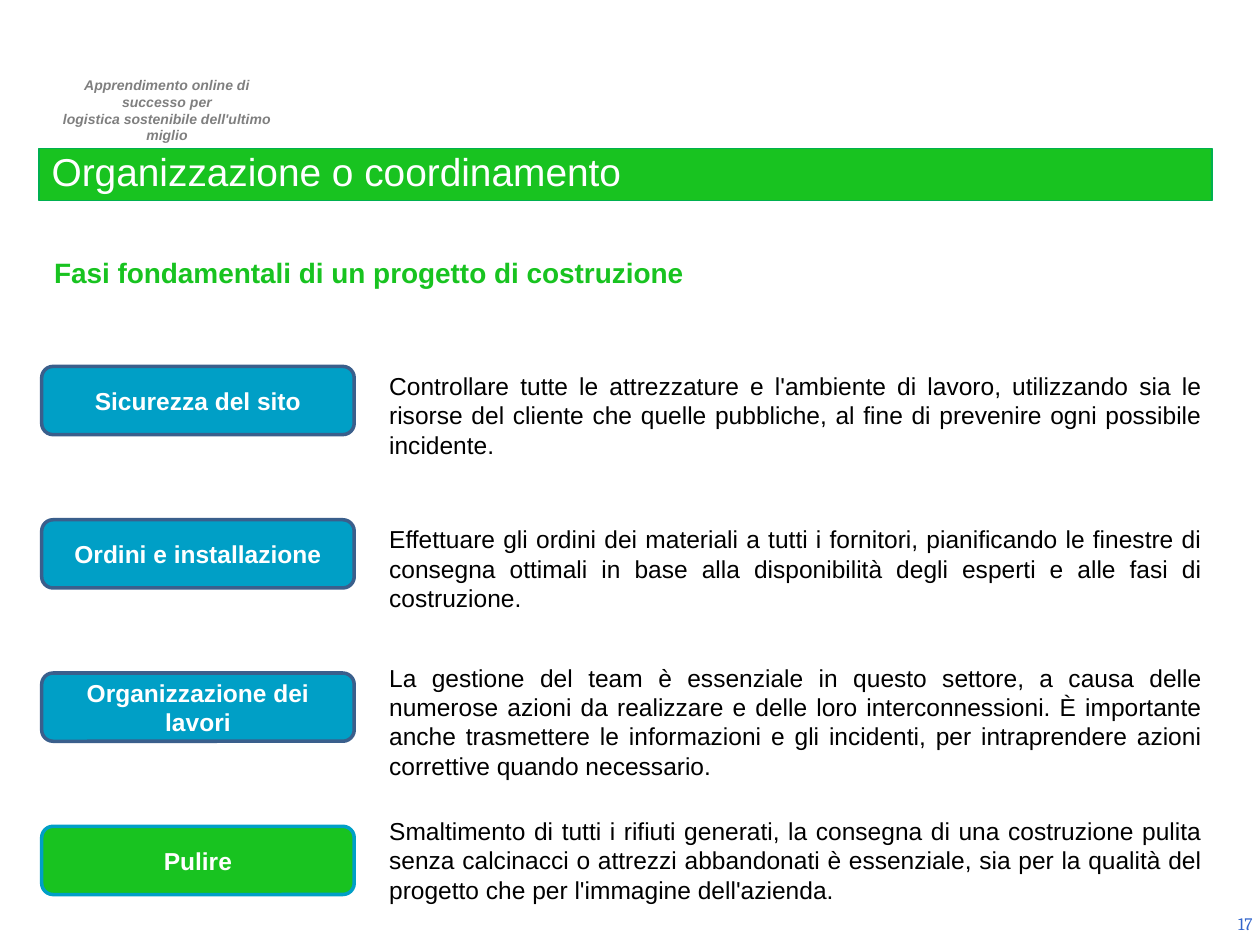
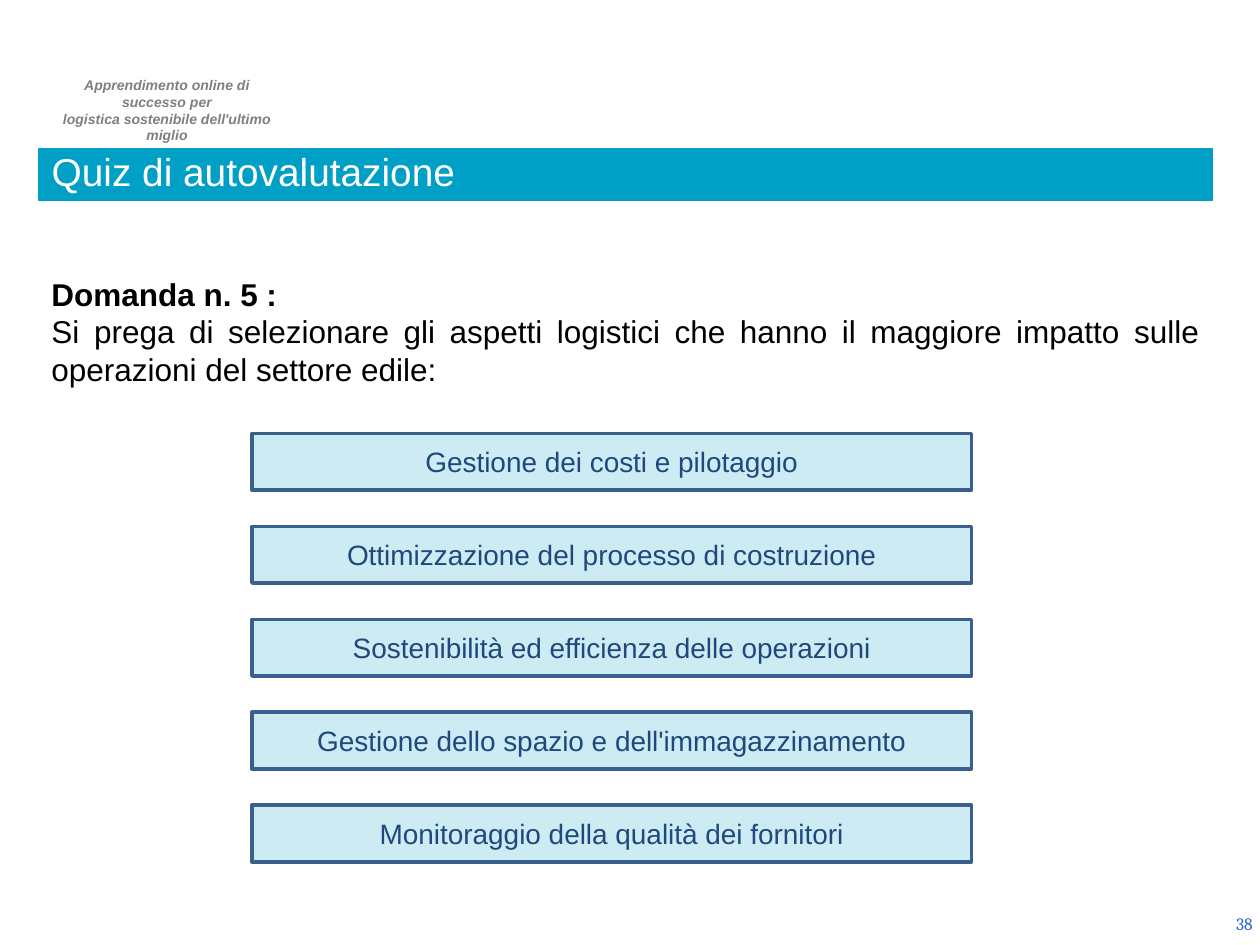
import pptx
import pptx.util
import pptx.dml.color
import pptx.enum.shapes
import pptx.enum.text
import pptx.oxml.ns
import lxml.etree
from dataclasses import dataclass

HEADER = ["Apprendimento online di successo per", "logistica sostenibile dell'ultimo miglio"]

STAGES = {
    "title": "Organizzazione o coordinamento",
    "page": "17",
    "head": "Fasi fondamentali di un progetto di costruzione",
    "rows": [
        ("Sicurezza del sito", 41,
         "Controllare tutte le attrezzature e l'ambiente di lavoro, utilizzando sia le risorse "
         "del cliente che quelle pubbliche, al fine di prevenire ogni possibile incidente."),
        ("Ordini e installazione", 41,
         "Effettuare gli ordini dei materiali a tutti i fornitori, pianificando le finestre di "
         "consegna ottimali in base alla disponibilità degli esperti e alle fasi di costruzione."),
        ("Organizzazione dei lavori", 58,
         "La gestione del team è essenziale in questo settore, a causa delle numerose azioni da "
         "realizzare e delle loro interconnessioni. È importante anche trasmettere le "
         "informazioni e gli incidenti, per intraprendere azioni correttive quando necessario."),
        ("Pulire", 58,
         "Smaltimento di tutti i rifiuti generati, la consegna di una costruzione pulita senza "
         "calcinacci o attrezzi abbandonati è essenziale, sia per la qualità del progetto che "
         "per l'immagine dell'azienda."),
    ],
}

QUIZ = {
    "title": "Quiz di autovalutazione",
    "page": "38",
    "ask": ["Domanda n. 5 :",
            "Si prega di selezionare gli aspetti logistici che hanno il maggiore impatto sulle "
            "operazioni del settore edile:"],
    "choices": [
        "Gestione dei costi e pilotaggio",
        "Ottimizzazione del processo di costruzione",
        "Sostenibilità ed efficienza delle operazioni",
        "Gestione dello spazio e dell'immagazzinamento",
        "Monitoraggio della qualità dei fornitori",
    ],
}


@dataclass(frozen=True)
class Theme:
    green: str = "18C320"
    leaf: str = "00B050"
    blue: str = "009FC6"
    steel: str = "3A5F8C"
    navy: str = "1F497D"
    link: str = "3366CC"
    grey: str = "7F7F7F"
    black: str = "000000"
    white: str = "FFFFFF"
    sans: str = "Arial"
    serif: str = "Cambria"
    tiny: float = 8
    small: float = 10
    body: float = 14
    head: float = 16
    ask: float = 18
    title: float = 22.2


T = Theme()
Pt = pptx.util.Pt
Align = pptx.enum.text.PP_ALIGN
Anchor = pptx.enum.text.MSO_ANCHOR
Fit = pptx.enum.text.MSO_AUTO_SIZE
Kind = pptx.enum.shapes.MSO_SHAPE


def rgb(code):
    return pptx.dml.color.RGBColor.from_string(code)


def write(shape, lines, size, color, align, bold=False, slant=False, face=T.sans):
    frame = shape.text_frame
    frame.word_wrap = True
    frame.text = "\n".join(lines)
    for para in frame.paragraphs:
        para.alignment = align
        for run in para.runs:
            font = run.font
            font.name, font.size = face, Pt(size)
            font.bold, font.italic = bold, slant
            font.color.rgb = rgb(color)
    return frame


def paint(shape, fill, line, width):
    shape.fill.solid()
    shape.fill.fore_color.rgb = rgb(fill)
    shape.line.color.rgb = rgb(line)
    shape.line.width = Pt(width)


def note(slide, area, lines, *style, grow=True, **more):
    box = slide.shapes.add_textbox(*map(Pt, area))
    frame = write(box, lines, *style, **more)
    frame.auto_size = Fit.SHAPE_TO_FIT_TEXT if grow else Fit.NONE
    return frame


def button(slide, kind, area, label, fill, line, size, color, bold=False):
    shape = slide.shapes.add_shape(kind, *map(Pt, area))
    shape.shadow.inherit = False
    paint(shape, fill, line, 2)
    write(shape, [label], size, color, Align.CENTER, bold).vertical_anchor = Anchor.MIDDLE
    return shape


def fade(shape, share):
    tag = pptx.oxml.ns.qn
    color = shape.element.spPr.find(tag("a:solidFill")).find(tag("a:srgbClr"))
    lxml.etree.SubElement(color, tag("a:alpha"), val=str(share * 1000))


def start(deck, data, fill, line):
    slide = deck.slides.add_slide(deck.slide_layouts[5])
    band = slide.shapes.title
    band.left, band.top, band.width, band.height = map(Pt, (22.3, 85, 670.3, 29.5))
    paint(band, fill, line, 0.75)
    frame = write(band, [data["title"]], T.title, T.white, Align.LEFT)
    frame.auto_size = Fit.NONE
    frame.vertical_anchor = Anchor.BOTTOM
    frame.paragraphs[0].line_spacing = 0.8
    head = note(slide, (20.9, 40.3, 146.2, 26.6), HEADER, T.tiny, T.grey, Align.CENTER,
                bold=True, slant=True)
    head.margin_left = Pt(10)
    foot = note(slide, (555.1, 513.4, 167.8, 28.8), [data["page"]], T.small, T.link,
                Align.RIGHT, face=T.serif, grow=False)
    foot.vertical_anchor = Anchor.MIDDLE
    return slide


def stages(deck):
    slide = start(deck, STAGES, T.green, T.leaf)
    note(slide, (23.8, 142.6, 668, 26.6), [STAGES["head"]], T.head, T.green, Align.JUSTIFY,
         bold=True)
    top, step, high = 209.4, 87.6, 39
    last = len(STAGES["rows"]) - 1
    for i, (label, tall, text) in enumerate(STAGES["rows"]):
        y = top + i * step
        fill, line = (T.green, T.blue) if i == last else (T.blue, T.steel)
        button(slide, Kind.ROUNDED_RECTANGLE, (23.8, y, 178.6, high), label, fill, line,
               T.body, T.white, True)
        note(slide, (215.3, y + (high - tall) / 2, 478.8, tall), [text], T.body, T.black,
             Align.JUSTIFY)


def quiz(deck):
    slide = start(deck, QUIZ, T.blue, T.blue)
    frame = note(slide, (22.3, 153.4, 670.3, 72.7), QUIZ["ask"], T.ask, T.black, Align.JUSTIFY)
    lead = frame.paragraphs[0]
    lead.alignment = Align.LEFT
    lead.runs[0].font.bold = True
    top, step = 247.7, 53.1
    for i, label in enumerate(QUIZ["choices"]):
        shape = button(slide, Kind.RECTANGLE, (144, top + i * step, 411.1, 32.4), label,
                       T.blue, T.steel, T.head, T.navy)
        fade(shape, 20)


def main():
    deck = pptx.Presentation()
    deck.slide_width, deck.slide_height = Pt(720), Pt(540)
    stages(deck)
    quiz(deck)
    deck.save("out.pptx")


if __name__ == "__main__":
    main()
